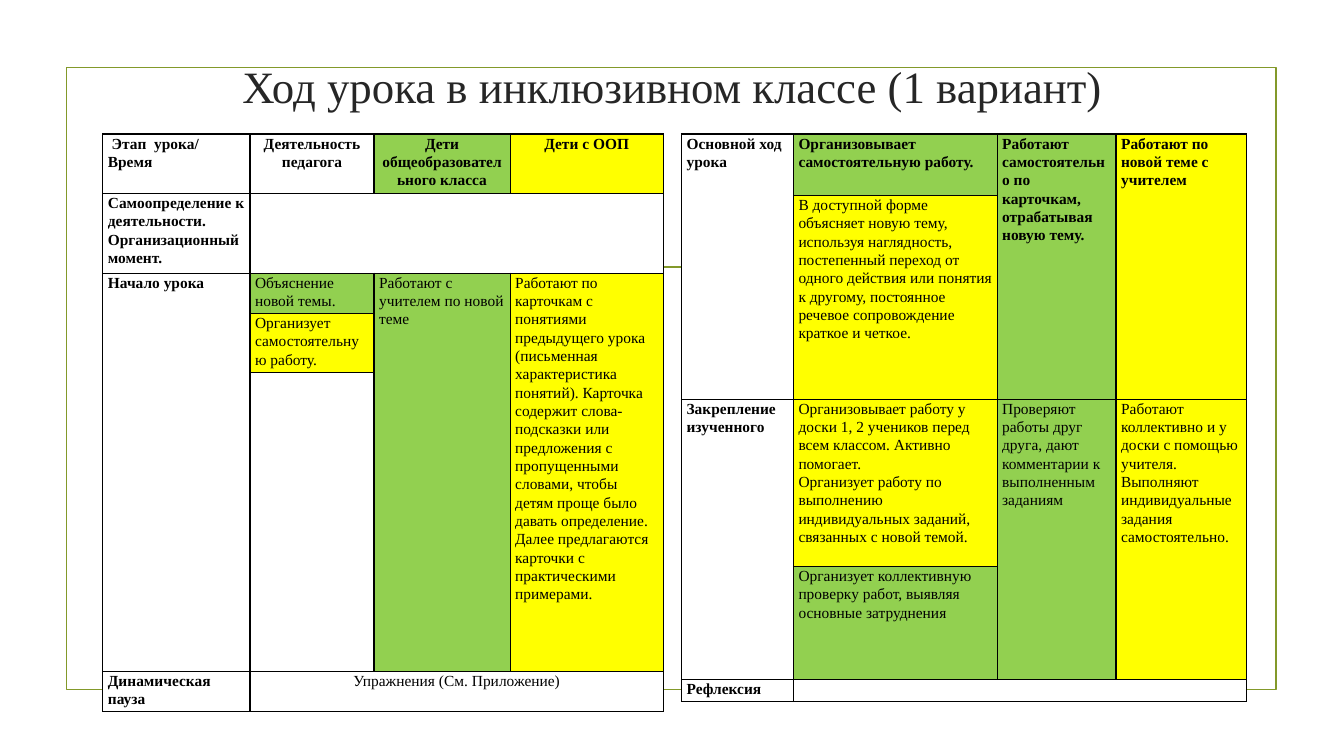
from lxml import etree
from pptx import Presentation
from pptx.dml.color import RGBColor as Rgb
from pptx.enum.shapes import MSO_CONNECTOR as Conn, MSO_SHAPE as Shape
from pptx.enum.text import MSO_ANCHOR as Anchor, PP_ALIGN as Align
from pptx.oxml.ns import qn
from pptx.util import Inches, Pt

BLACK = Rgb(0, 0, 0)
DARK = Rgb(0x26, 0x26, 0x26)
OLIVE = Rgb(0x83, 0x99, 0x2A)
FILLS = {
    "W": Rgb(0xFF, 0xFF, 0xFF),
    "G": Rgb(0x92, 0xD0, 0x50),
    "Y": Rgb(0xFF, 0xFF, 0x00),
}
FACE = "Times New Roman"
TITLE = "Ход урока в инклюзивном классе (1 вариант)"

# Each text is keyed by (row, column); a span joins its first and last cell.
START = {
    "left": 1.02,
    "cols": [1.46, 1.23, 1.35, 1.52],
    "rows": [0.59, 0.79, 0.4, 0.59, 2.96, 0.4],
    "fills": ["WWGY", "WWWW", "WGGY", "WYGY", "WWGY", "WWWW"],
    "spans": [((1, 1), (1, 3)), ((2, 0), (4, 0)), ((2, 2), (4, 2)),
              ((2, 3), (4, 3)), ((5, 1), (5, 3))],
    "bold": [(0, 0), (0, 1), (0, 2), (0, 3), (1, 0), (2, 0), (5, 0)],
    "mid": [(0, 1), (0, 2), (0, 3), (5, 1)],
    "texts": {
        (0, 0): " Этап  урока/ Время",
        (0, 1): "Деятельность педагога",
        (0, 2): "Дети общеобразовательного класса",
        (0, 3): "Дети с ООП",
        (1, 0): "Самоопределение к деятельности. Организационный момент.",
        (2, 0): "Начало урока",
        (2, 1): "Объяснение новой темы.",
        (2, 2): "Работают с учителем по новой теме",
        (2, 3): "Работают по карточкам с понятиями предыдущего урока "
                "(письменная характеристика понятий). Карточка содержит "
                "слова-подсказки или предложения с пропущенными словами, "
                "чтобы детям проще было давать определение. Далее "
                "предлагаются карточки с практическими примерами.",
        (3, 1): "Организует самостоятельную работу.",
        (5, 0): "Динамическая пауза",
        (5, 1): "Упражнения (См. Приложение)",
    },
}
MAIN = {
    "left": 6.76,
    "cols": [1.11, 2.02, 1.18, 1.29],
    "rows": [0.61, 2.02, 1.66, 1.12, 0.22],
    "fills": ["WGGY", "WYGY", "WYGY", "WGGY", "WWWW"],
    "spans": [((0, 0), (1, 0)), ((0, 2), (1, 2)), ((0, 3), (1, 3)),
              ((2, 0), (3, 0)), ((2, 2), (3, 2)), ((2, 3), (3, 3)),
              ((4, 1), (4, 3))],
    "bold": [(0, 0), (0, 1), (0, 2), (0, 3), (2, 0), (4, 0)],
    "mid": [],
    "texts": {
        (0, 0): "Основной ход урока",
        (0, 1): "Организовывает самостоятельную работу.",
        (0, 2): "Работают самостоятельно по карточкам, отрабатывая "
                "новую тему.",
        (0, 3): "Работают по новой теме с  учителем",
        (1, 1): "В доступной форме  объясняет новую тему, используя "
                "наглядность, постепенный переход от одного действия или "
                "понятия к другому, постоянное речевое сопровождение "
                "краткое и четкое.",
        (2, 0): "Закрепление изученного",
        (2, 1): "Организовывает работу у доски 1, 2 учеников перед всем "
                "классом. Активно помогает.\n"
                "Организует работу по выполнению  индивидуальных заданий, "
                "связанных с новой темой.",
        (2, 2): "Проверяют работы друг друга, дают комментарии к "
                "выполненным заданиям",
        (2, 3): "Работают коллективно и у доски с помощью учителя.\n"
                "Выполняют индивидуальные задания самостоятельно.",
        (3, 1): "Организует коллективную проверку работ, выявляя основные "
                "затруднения",
        (4, 0): "Рефлексия",
    },
}
TOP = 1.33


def put(item, **values):
    for name, value in values.items():
        setattr(item, name, value)


def style(par, size, color, bold=False):
    for run in par.runs:
        put(run.font, name=FACE, size=Pt(size), bold=bold)
        run.font.color.rgb = color


def edge(cell):
    """Draw a thin black line on all four sides of a cell."""
    props = cell._tc.get_or_add_tcPr()
    for side in "LRTB":
        line = etree.SubElement(props, qn("a:ln" + side), w=str(Pt(1)))
        fill = etree.SubElement(line, qn("a:solidFill"))
        etree.SubElement(fill, qn("a:srgbClr"), val=str(BLACK))


def add_grid(slide, data):
    cols, rows = data["cols"], data["rows"]
    frame = slide.shapes.add_table(
        len(rows), len(cols), Inches(data["left"]), Inches(TOP),
        Inches(sum(cols)), Inches(sum(rows)))
    table = frame.table
    put(table, first_row=False, horz_banding=False)
    for col, width in zip(table.columns, cols):
        col.width = Inches(width)
    for row, height in zip(table.rows, rows):
        row.height = Inches(height)
    for first, last in data["spans"]:
        table.cell(*first).merge(table.cell(*last))
    for r, codes in enumerate(data["fills"]):
        for c, code in enumerate(codes):
            key, cell = (r, c), table.cell(r, c)
            put(cell, margin_left=Inches(0.05), margin_right=Inches(0.05),
                margin_top=0, margin_bottom=0)
            edge(cell)
            cell.fill.solid()
            cell.fill.fore_color.rgb = FILLS[code]
            cell.text = data["texts"].get(key, "")
            for par in cell.text_frame.paragraphs:
                put(par, line_spacing=1.07,
                    alignment=Align.CENTER if key in data["mid"]
                    else Align.LEFT)
                style(par, 11, BLACK, key in data["bold"])
                if not par.runs:
                    etree.SubElement(par._p, qn("a:endParaRPr"), sz="1100")


def main():
    deck = Presentation()
    put(deck, slide_width=Inches(13.33), slide_height=Inches(7.5))
    slide = deck.slides.add_slide(deck.slide_layouts[6])
    shapes = slide.shapes

    border = shapes.add_shape(Shape.RECTANGLE, Inches(0.66), Inches(0.67),
                              Inches(12), Inches(6.17))
    border.shadow.inherit = False
    border.fill.background()
    rule = shapes.add_connector(Conn.STRAIGHT, Inches(1.53), Inches(2.65),
                                Inches(11.81), Inches(2.65))
    for item in (border, rule):
        item.line.color.rgb = OLIVE
        item.line.width = Pt(1.25)
    etree.SubElement(rule._element.spPr, qn("a:effectLst"))

    box = shapes.add_textbox(Inches(1.42), Inches(0.51),
                             Inches(10.5), Inches(0.67))
    put(box.text_frame, word_wrap=True, vertical_anchor=Anchor.MIDDLE,
        text=TITLE)
    head = box.text_frame.paragraphs[0]
    head.alignment = Align.CENTER
    style(head, 32, DARK)

    for data in (START, MAIN):
        add_grid(slide, data)
    deck.save("out.pptx")


if __name__ == "__main__":
    main()
